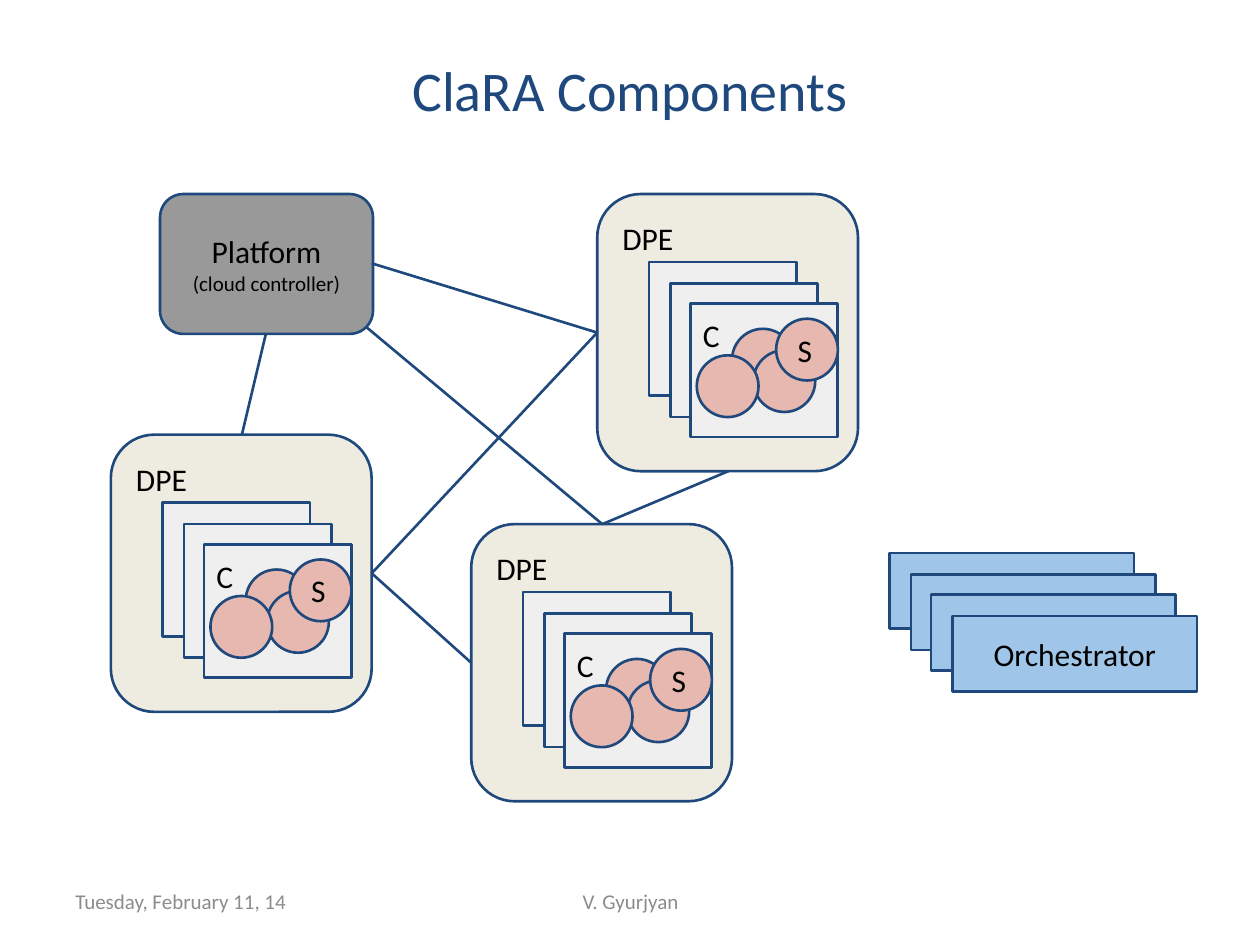
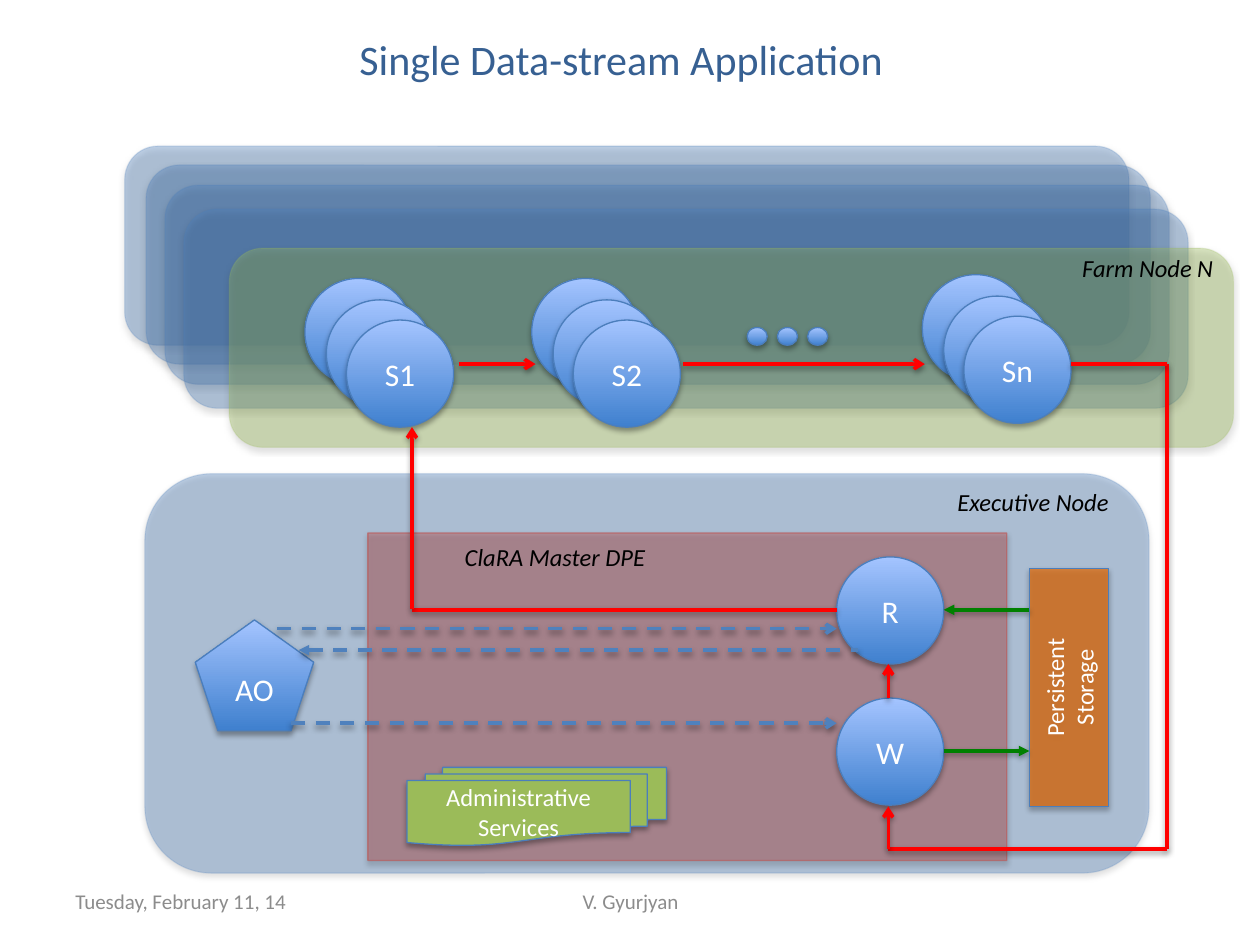
from lxml import etree
from pptx import Presentation
from pptx import util as u
from pptx.dml import color
from pptx.enum import dml, shapes, text
from pptx.oxml import ns

FONT = "Calibri"
BLACK, WHITE, GREY = "000000", "FFFFFF", "8C8C8C"
NAVY, STEEL, BLUE = "1F497D", "4B7EBC", "4F81BD"
LIME, BRICK, ORANGE = "9BBB59", "C0504D", "E46C0A"
RED, GREEN = "FF0000", "008000"
GLOSS = ("3F80CE", "A4C4FF")
KIND = shapes.MSO_SHAPE
ALIGN = text.PP_ALIGN
ANCHOR = text.MSO_ANCHOR
STACK_STEP = 50 / 3


def px(length):
    return u.Emu(round(length * 9144))


def rgb(value):
    return color.RGBColor.from_string(value)


def child(parent, tag, **attributes):
    return etree.SubElement(parent, ns.qn(tag), attributes)


def fade(parent, percent):
    child(parent.find(ns.qn("a:solidFill"))[0], "a:alpha", val=str(percent * 1000))


def stacked(left, top, count):
    return [(left + round(i * STACK_STEP), top + round(i * STACK_STEP)) for i in range(count)]


class Deck:
    def __init__(self):
        self.presentation = Presentation()
        self.presentation.slide_width = px(1000)
        self.presentation.slide_height = px(750)
        self.slide = None

    def start(self, title, box, size, ink):
        self.slide = self.presentation.slides.add_slide(self.presentation.slide_layouts[6])
        self.caption(title, box, size, ink, align=ALIGN.CENTER)
        self.caption("Tuesday, February 11, 14", (50, 695, 233, 40), 12, GREY)
        self.caption("V. Gyurjyan", (342, 695, 317, 40), 12, GREY, align=ALIGN.CENTER)

    def fill_text(self, shape, lines, ink, align, anchor, italic=False, margin=5):
        frame = shape.text_frame
        frame.word_wrap = True
        frame.vertical_anchor = anchor
        frame.margin_left = frame.margin_right = px(10)
        frame.margin_top = frame.margin_bottom = px(margin)
        for index, (words, size) in enumerate(lines):
            paragraph = frame.add_paragraph() if index else frame.paragraphs[0]
            paragraph.alignment = align
            run = paragraph.add_run()
            run.text = words
            run.font.name = FONT
            run.font.size = u.Pt(size)
            run.font.italic = italic
            run.font.color.rgb = rgb(ink)

    def caption(self, words, box, size, ink, align=ALIGN.LEFT):
        shape = self.slide.shapes.add_textbox(*map(px, box))
        self.fill_text(shape, [(words, size)], ink, align, ANCHOR.MIDDLE)

    def label(self, words, box):
        shape = self.slide.shapes.add_textbox(*map(px, box))
        self.fill_text(shape, [(words, 14)], BLACK, ALIGN.LEFT, ANCHOR.TOP, italic=True)
        shape.text_frame.word_wrap = False
        shape.text_frame.auto_size = text.MSO_AUTO_SIZE.SHAPE_TO_FIT_TEXT

    def effects(self, shape, opacity=0, distance=0):
        effect_list = child(shape._element.spPr, "a:effectLst")
        if opacity:
            shadow = child(effect_list, "a:outerShdw", blurRad="40000", dist=str(distance),
                           dir="5400000", rotWithShape="0")
            black = child(shadow, "a:srgbClr", val=BLACK)
            child(black, "a:alpha", val=str(opacity * 1000))

    def outline(self, shape, ink, width):
        shape.line.color.rgb = rgb(ink)
        shape.line.width = u.Pt(width)

    def flat(self, kind, box, fill, lines=(), align=ALIGN.LEFT, anchor=ANCHOR.MIDDLE):
        shape = self.slide.shapes.add_shape(kind, *map(px, box))
        shape.fill.solid()
        shape.fill.fore_color.rgb = rgb(fill)
        self.outline(shape, NAVY, 1.5)
        self.effects(shape)
        self.fill_text(shape, lines, BLACK, align, anchor, margin=10)

    def raised(self, kind, box, fill=GLOSS, lines=(), opacity=100, line=STEEL,
               line_opacity=100, rotation=0):
        shape = self.slide.shapes.add_shape(kind, *map(px, box))
        shape.rotation = rotation
        if fill == GLOSS:
            shape.fill.gradient()
            shape.fill.gradient_angle = 90
            for stop, shade in zip(shape.fill.gradient_stops, GLOSS):
                stop.color.rgb = rgb(shade)
        else:
            shape.fill.solid()
            shape.fill.fore_color.rgb = rgb(fill)
            if opacity < 100:
                fade(shape._element.spPr, opacity)
        self.outline(shape, line, 0.75)
        if line_opacity < 100:
            fade(shape.line._get_or_add_ln(), line_opacity)
        self.effects(shape, 35, 23000)
        self.fill_text(shape, lines, WHITE, ALIGN.CENTER, ANCHOR.MIDDLE)

    def ball(self, left, top, words):
        self.raised(KIND.OVAL, (left, top, 85, 85), lines=[(words, 18)])

    def panel(self, left, top, height, fill=BLUE, line=STEEL):
        self.raised(KIND.ROUNDED_RECTANGLE, (left, top, 797, height), fill,
                    opacity=36, line=line, line_opacity=18)

    def connect(self, ends, ink=NAVY, width=1.5, head=None, tail=None, dash=False, shadow=False):
        connector = self.slide.shapes.add_connector(shapes.MSO_CONNECTOR.STRAIGHT, *map(px, ends))
        self.outline(connector, ink, width)
        if dash:
            connector.line.dash_style = dml.MSO_LINE.DASH
        for tag, arrow in (("a:headEnd", head), ("a:tailEnd", tail)):
            if arrow:
                child(connector.line._get_or_add_ln(), tag, type=arrow)
        self.effects(connector, 38 if shadow else 0, 20000)

    def flow(self, ends, ink=RED, **options):
        self.connect(ends, ink, 2, shadow=True, **options)

    def engine(self, left, top):
        self.flat(KIND.ROUNDED_RECTANGLE, (left, top, 207, 220), "EEECE1",
                  [("DPE", 18)], anchor=ANCHOR.TOP)
        for index, (x, y) in enumerate(stacked(left + 41, top + 54, 3)):
            self.flat(KIND.RECTANGLE, (x, y, 117, 106), "EFEFEF",
                      [("C", 18)] if index == 2 else (), anchor=ANCHOR.TOP)
        for x, y, words in ((107, 107, ""), (124, 124, ""), (79, 128, ""), (142, 99, "S")):
            self.flat(KIND.OVAL, (left + x, top + y, 49, 49), "E6B8AF",
                      [(words, 18)] if words else ())


def build_components(deck):
    deck.start("ClaRA Components", (50, 30, 900, 81), 32, NAVY)
    deck.flat(KIND.ROUNDED_RECTANGLE, (127, 154, 169, 111), "999999",
              [("Platform", 18), ("(cloud controller)", 12)], ALIGN.CENTER)
    for left, top in ((88, 345), (474, 154), (374, 416)):
        deck.engine(left, top)
    for ends in ((211, 265, 192, 345), (295, 209, 474, 264), (290, 259, 478, 416),
                 (295, 455, 474, 264), (295, 455, 374, 526), (478, 416, 578, 374)):
        deck.connect(ends)
    for index, (left, top) in enumerate(stacked(706, 439, 4)):
        deck.flat(KIND.RECTANGLE, (left, top, 194, 60), "9FC5E8",
                  [("Orchestrator", 18)] if index == 3 else (), ALIGN.CENTER)


def build_application(deck):
    deck.start("Single Data-stream Application", (43, 5, 900, 84), 24, "376092")

    deck.panel(115, 376, 317)
    deck.raised(KIND.RECTANGLE, (292, 423, 507, 260), BRICK, opacity=40,
                line=BRICK, line_opacity=59)
    deck.ball(664, 442, "R")
    deck.ball(664, 554, "W")
    deck.raised(KIND.FLOWCHART_MULTIDOCUMENT, (323, 609, 206, 62), LIME,
                [("Administrative", 14), ("Services", 14)])
    deck.label("ClaRA Master DPE", (359, 425, 170, 34))
    deck.raised(KIND.RECTANGLE, (754, 514, 189, 63), ORANGE,
                [("Persistent", 14), ("Storage", 14)], opacity=73, rotation=270)
    deck.flow((749, 596, 817, 596), GREEN, tail="triangle")
    deck.flow((749, 484, 817, 484), GREEN, head="triangle")
    deck.raised(KIND.REGULAR_PENTAGON, (155, 492, 94, 88), lines=[("AO", 18)])
    deck.label("Executive Node", (750, 382, 146, 34))

    for left, top in ((99, 116), (116, 131), (131, 147), (146, 166)):
        deck.panel(left, top, 158)
    deck.panel(182, 197, 158, LIME, LIME)
    deck.label("Farm Node N", (849, 196, 130, 34))
    for left, top, words in ((242, 221, "S1"), (422, 221, "S2"), (732, 218, "Sn")):
        for x, y in stacked(left, top, 3):
            deck.ball(x, y, words)
    for index in range(3):
        deck.raised(KIND.OVAL, (593 + 24 * index, 260, 16, 14))

    for ends in ((664, 484, 327, 484), (926, 674, 926, 289),
                 (850, 289, 926, 289), (926, 674, 705, 674)):
        deck.flow(ends)
    for ends in ((327, 483, 327, 339), (364, 289, 425, 289), (542, 289, 734, 289),
                 (705, 674, 705, 640), (705, 554, 705, 527)):
        deck.flow(ends, tail="arrow")
    deck.flow((220, 499, 664, 499), BLUE, tail="arrow", dash=True)
    deck.flow((237, 516, 681, 516), BLUE, head="triangle", dash=True)
    deck.flow((231, 574, 664, 574), BLUE, tail="arrow", dash=True)


def main():
    deck = Deck()
    build_components(deck)
    build_application(deck)
    deck.presentation.save("out.pptx")


if __name__ == "__main__":
    main()
